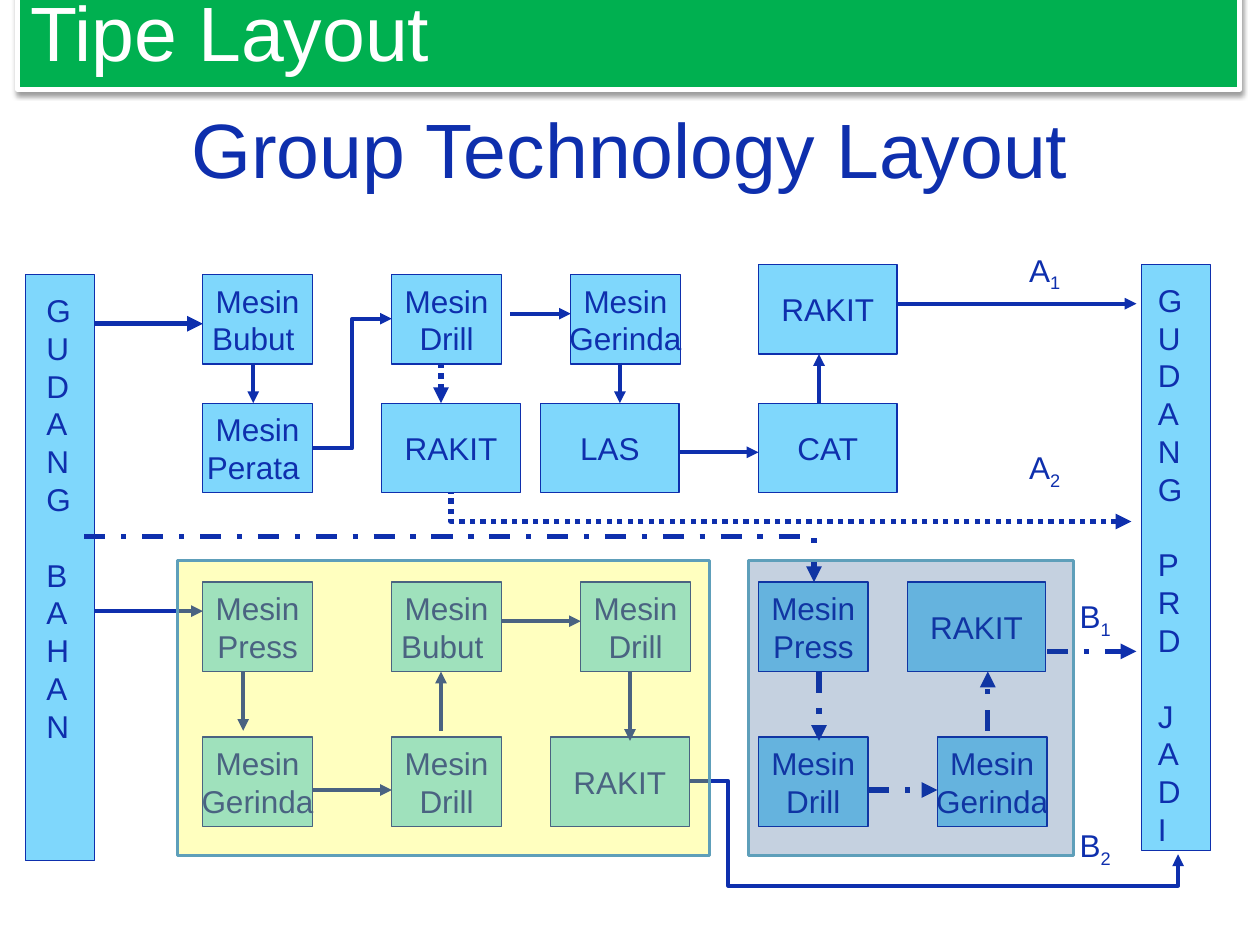
from dataclasses import dataclass
from typing import Optional

from lxml.etree import SubElement
from pptx import Presentation
from pptx.dml.color import RGBColor
from pptx.enum.dml import MSO_LINE_DASH_STYLE as Dash
from pptx.enum.shapes import MSO_CONNECTOR as Link, MSO_SHAPE as Preset
from pptx.enum.text import MSO_ANCHOR as Anchor, PP_ALIGN as Align
from pptx.oxml.ns import qn
from pptx.util import Inches, Pt

COLORS = {
    "ink": "0E2FAD", "machine": "7FD7FC", "banner": "00B050", "white": "FFFFFF",
    "cell_edge": "5E9FBA", "yellow_cell": "FFFF00", "blue_cell": "194887", "shadow": "000000",
}
FONT = "Arial"
MACHINE_W, ASSEMBLY_W, STATION_H = 0.87, 1.1, 0.71
STORE_W, STORE_H = 0.55, 4.65
ROW_1, ROW_2, ROW_3, ROW_4 = 2.18, 3.2, 4.62, 5.85


@dataclass
class Station:
    label: str
    left: float
    top: float
    width: float = MACHINE_W


@dataclass
class Flow:
    start: tuple[float, float]
    end: tuple[float, float]
    weight: float = 2.25
    dash: Optional[Dash] = None
    bend: Optional[str] = None
    adjust: tuple[float, ...] = ()
    arrow_at: str = "tailEnd"


@dataclass
class Store:
    words: tuple[str, ...]
    left: float
    top: float
    text_left: float
    text_top: float
    text_w: float


@dataclass
class Cell:
    left: float
    width: float
    color: str


STATIONS = [
    Station("Mesin\nBubut ", 1.61, ROW_1), Station("Mesin\nDrill", 3.11, ROW_1),
    Station("Mesin\nGerinda", 4.53, ROW_1), Station("RAKIT", 6.02, 2.1, ASSEMBLY_W),
    Station("Mesin\nPerata ", 1.61, ROW_2), Station("RAKIT", 3.03, ROW_2, ASSEMBLY_W),
    Station("LAS", 4.29, ROW_2, ASSEMBLY_W), Station("CAT", 6.02, ROW_2, ASSEMBLY_W),
    Station("Mesin\nPress", 1.61, ROW_3), Station("Mesin\nBubut ", 3.11, ROW_3),
    Station("Mesin\nDrill", 4.61, ROW_3), Station("Mesin\nPress", 6.02, ROW_3),
    Station("RAKIT", 7.2, ROW_3, ASSEMBLY_W),
    Station("Mesin\nGerinda", 1.61, ROW_4), Station("Mesin\nDrill", 3.11, ROW_4),
    Station("RAKIT", 4.37, ROW_4, ASSEMBLY_W), Station("Mesin\nDrill", 6.02, ROW_4),
    Station("Mesin\nGerinda", 7.44, ROW_4),
]
FLOWS = [
    # Product A1
    Flow((0.75, 2.57), (1.61, 2.57), 3), Flow((2.01, 2.88), (2.01, 3.2)),
    Flow((2.48, 3.56), (3.11, 2.53), bend="bentConnector3", adjust=(0.5,)),
    Flow((4.05, 2.49), (4.53, 2.49)), Flow((4.92, 2.88), (4.92, 3.2)),
    Flow((5.39, 3.59), (6.02, 3.59)), Flow((6.5, 3.2), (6.5, 2.81)),
    Flow((7.12, 2.41), (9.02, 2.41)),
    # Product A2
    Flow((3.5, 2.88), (3.5, 3.2), 3, Dash.ROUND_DOT),
    Flow((8.98, 4.14), (3.58, 3.91), 3, Dash.ROUND_DOT, "bentConnector2", arrow_at="headEnd"),
    # Product B1
    Flow((0.67, 4.26), (6.46, 4.62), 3, Dash.DASH_DOT, "bentConnector2"),
    Flow((6.5, 5.33), (6.5, 5.88), 3, Dash.DASH_DOT),
    Flow((6.89, 6.27), (7.44, 6.27), 3, Dash.DASH_DOT),
    Flow((7.84, 5.8), (7.84, 5.33), 3, Dash.DASH_DOT),
    Flow((8.31, 5.17), (9.02, 5.17), 3, Dash.DASH_DOT),
    # Product B2
    Flow((0.75, 4.85), (1.61, 4.85)), Flow((1.93, 5.33), (1.93, 5.8)),
    Flow((2.48, 6.27), (3.11, 6.27)), Flow((3.5, 5.8), (3.5, 5.33)),
    Flow((3.98, 4.93), (4.61, 4.93)), Flow((5, 5.33), (5, 5.88)),
    Flow((5.47, 6.2), (9.35, 6.78), bend="bentConnector4", adjust=(0.08, 1.43)),
]
STORES = [
    Store(("GUDANG", "BAHAN"), 0.2, 2.18, 0.27, 2.26, 0.4),
    Store(("GUDANG", "PRD", "JADI"), 9.06, 2.1, 9.09, 2.18, 0.51),
]
PRODUCTS = [("A", "1", 8.07, 1.94), ("A", "2", 8.07, 3.51),
            ("B", "1", 8.47, 4.69), ("B", "2", 8.47, 6.51)]
CELLS = [Cell(1.41, 4.22, "yellow_cell"), Cell(5.94, 2.58, "blue_cell")]


def rgb(name: str) -> RGBColor:
    return RGBColor.from_string(COLORS[name])


def write(shape, text: str, *, size=18, color="ink", align=Align.LEFT, anchor=Anchor.TOP,
          wrap=True, subscript="", gap_lines=()) -> None:
    """Fill a shape with one paragraph per line; gap_lines get a line of space before."""
    frame = shape.text_frame
    frame.word_wrap, frame.vertical_anchor = wrap, anchor
    for i, line in enumerate(text.split("\n")):
        paragraph = frame.paragraphs[0] if i == 0 else frame.add_paragraph()
        paragraph.alignment = align
        if i in gap_lines:
            paragraph.space_before = Pt(size * 1.2)
        for part in filter(None, (line, subscript)):
            run = paragraph.add_run()
            run.text = part
            run.font.name, run.font.size = FONT, Pt(size)
            run.font.color.rgb = rgb(color)
            if part == subscript:
                run.font._element.set("baseline", "-25000")


def add_box(slide, left, top, width, height, *, fill, line, weight=0.75,
            preset=Preset.FLOWCHART_PROCESS, alpha=None):
    box = slide.shapes.add_shape(preset, Inches(left), Inches(top), Inches(width), Inches(height))
    box.shadow.inherit = False
    box.fill.solid()
    box.fill.fore_color.rgb = rgb(fill)
    box.line.color.rgb, box.line.width = rgb(line), Pt(weight)
    if alpha is not None:
        color = box._element.spPr.find(qn("a:solidFill"))[0]
        SubElement(color, qn("a:alpha"), val=str(alpha * 1000))
    return box


def add_flow(slide, flow: Flow) -> None:
    kind = Link.ELBOW if flow.bend else Link.STRAIGHT
    arrow = slide.shapes.add_connector(kind, *map(Inches, flow.start + flow.end))
    arrow.line.color.rgb, arrow.line.width = rgb("ink"), Pt(flow.weight)
    if flow.dash:
        arrow.line.dash_style = flow.dash
    properties = arrow._element.spPr
    SubElement(properties.find(qn("a:ln")), qn(f"a:{flow.arrow_at}"), type="triangle")
    SubElement(properties, qn("a:effectLst"))
    if flow.bend:
        geometry = properties.find(qn("a:prstGeom"))
        geometry.set("prst", flow.bend)
        guides = geometry.find(qn("a:avLst"))
        for i, share in enumerate(flow.adjust, 1):
            SubElement(guides, qn("a:gd"), name=f"adj{i}", fmla=f"val {round(share * 100000)}")


def add_text(slide, left, top, width, height, text, **text_format) -> None:
    area = slide.shapes.add_textbox(Inches(left), Inches(top), Inches(width), Inches(height))
    write(area, text, **text_format)


def add_store(slide, store: Store) -> None:
    add_box(slide, store.left, store.top, STORE_W, STORE_H, fill="machine", line="ink")
    letters = "".join(store.words)
    word_starts = [len("".join(store.words[:i])) for i in range(1, len(store.words))]
    add_text(slide, store.text_left, store.text_top, store.text_w, STORE_H - 0.1,
             "\n".join(letters), gap_lines=word_starts)


def add_banner(slide) -> None:
    banner = add_box(slide, 0.14, -0.23, 9.7, 0.94, fill="banner", line="white", weight=3,
                     preset=Preset.RECTANGLE)
    write(banner, "Tipe Layout", size=44, color="white", anchor=Anchor.MIDDLE)
    effects = banner._element.spPr.find(qn("a:effectLst"))
    shadow = SubElement(effects, qn("a:outerShdw"), blurRad=str(Pt(3.1)), dist=str(Pt(1.6)),
                        dir="5400000", rotWithShape="0")
    color = SubElement(shadow, qn("a:srgbClr"), val=COLORS["shadow"])
    SubElement(color, qn("a:alpha"), val="38000")


def main() -> None:
    deck = Presentation()
    deck.slide_width, deck.slide_height = Inches(10), Inches(7.5)
    slide = deck.slides.add_slide(deck.slide_layouts[5])

    # Title
    title = slide.shapes.title
    title.left, title.top, title.width, title.height = map(Inches, (0.5, 0.55, 9, 1.25))
    write(title, "Group Technology Layout", size=44, align=Align.CENTER, anchor=Anchor.MIDDLE)

    # Stores, stations and the flows between them
    for store in STORES:
        add_store(slide, store)
    for station in STATIONS:
        box = add_box(slide, station.left, station.top, station.width, STATION_H,
                      fill="machine", line="ink")
        write(box, station.label, align=Align.CENTER, anchor=Anchor.MIDDLE, wrap=False)
    for flow in FLOWS:
        add_flow(slide, flow)
    for letter, number, left, top in PRODUCTS:
        add_text(slide, left, top, 0.5, 0.4, letter, subscript=number, wrap=False)

    # Translucent cells over their stations
    for cell in CELLS:
        add_box(slide, cell.left, 4.45, cell.width, 2.34, fill=cell.color, line="cell_edge",
                weight=2, preset=Preset.RECTANGLE, alpha=25)

    add_banner(slide)
    deck.save("out.pptx")


if __name__ == "__main__":
    main()
